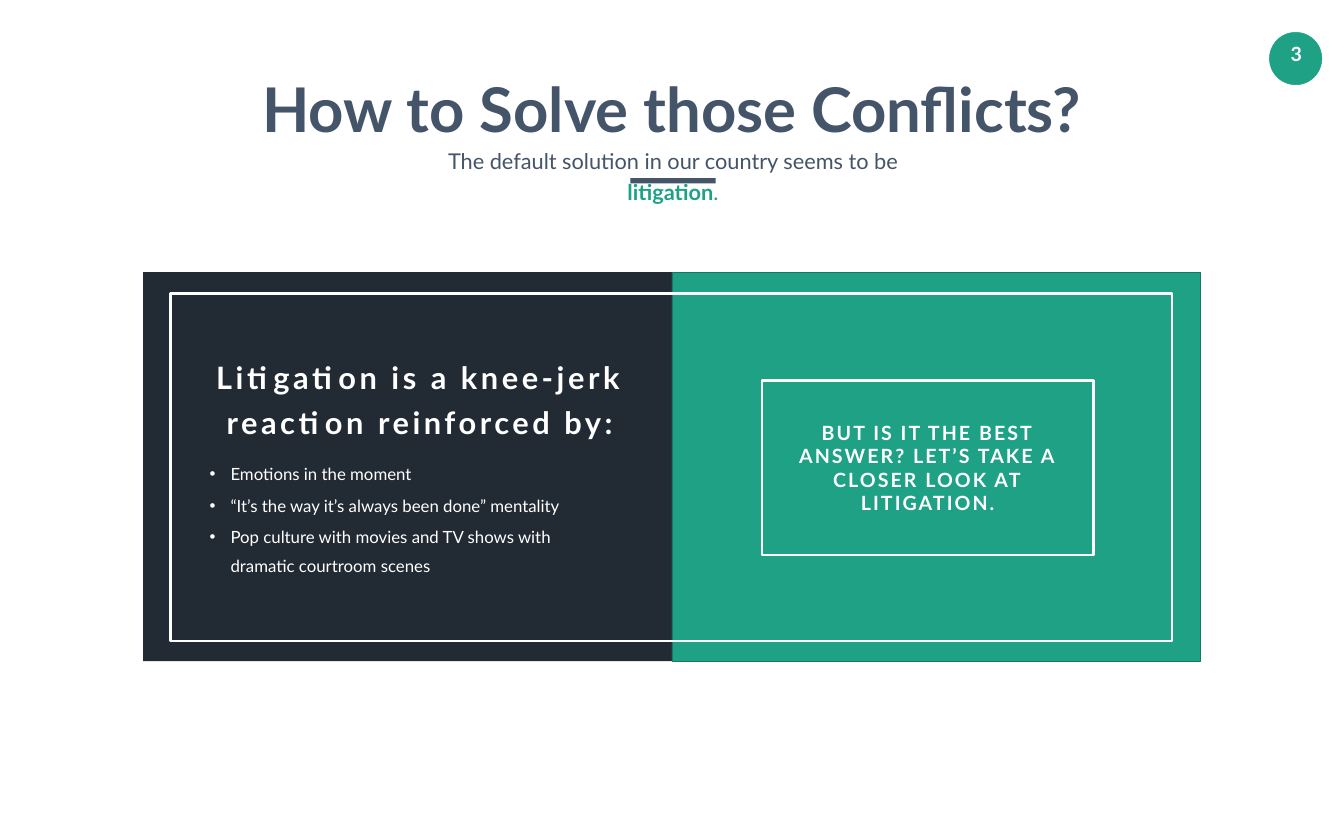
"""Build the slide on litigation as the default way to solve conflicts."""
import pptx
import pptx.util
from pptx.dml.color import RGBColor
from pptx.enum.shapes import MSO_SHAPE
from pptx.enum.text import MSO_ANCHOR, MSO_AUTO_SIZE, PP_ALIGN
from pptx.oxml.ns import qn
from lxml import etree

Pt = pptx.util.Pt

WHITE = RGBColor(0xFF, 0xFF, 0xFF)
GREEN = RGBColor(0x1E, 0xA1, 0x85)
GREEN_EDGE = RGBColor(0x16, 0x77, 0x62)
SLATE = RGBColor(0x44, 0x54, 0x69)
NAVY = RGBColor(0x22, 0x2A, 0x34)

FONT = "Lato"
SLIDE_W, SLIDE_H = 1440, 900
PANEL_X, PANEL_Y, PANEL_W, PANEL_H = 153.4, 291.6, 566.6, 416.9

SHAPES = [
    (MSO_SHAPE.OVAL, (1360.1, 34.6, 56.2, 56.2), GREEN, GREEN, 0.5),
    (MSO_SHAPE.RECTANGLE, (675.4, 190.8, 91.4, 5.8), SLATE, None, 0),
    (MSO_SHAPE.RECTANGLE, (PANEL_X, PANEL_Y, PANEL_W, PANEL_H), NAVY, None, 0),
    (MSO_SHAPE.RECTANGLE, (PANEL_X + PANEL_W, PANEL_Y, PANEL_W, PANEL_H), GREEN, GREEN_EDGE, 1),
    (MSO_SHAPE.RECTANGLE, (182.9, 314.6, 1072.8, 372.2), None, WHITE, 2.8),
    (MSO_SHAPE.RECTANGLE, (816.5, 407.5, 355, 187.2), None, WHITE, 3),
]

SUBTITLE = [("The default solution in our country seems to be ", SLATE, False),
            ("litigation", GREEN, True), (".", GREEN, False)]
BULLETS = ["Emotions in the moment",
           "“It’s the way it’s always been done” mentality",
           "Pop culture with movies and TV shows with dramatic courtroom scenes"]

CENTER = {"alignment": PP_ALIGN.CENTER}
LOOSE = {"alignment": PP_ALIGN.CENTER, "line_spacing": 1.2}
LISTED = {"line_spacing": Pt(30.3), "space_before": Pt(3.6)}

TEXTS = [
    {"box": (1365.1, 39.6, 47.5, 36.7), "inset": (10.8, 5), "wrap": False, "size": 21,
     "paras": [[("3", WHITE, True)]], "format": CENTER},
    {"box": (275, 73.4, 889.9, 85.7), "inset": (5.8, 2.9), "wrap": False, "size": 66,
     "paras": [[("How to Solve those Conflicts?", SLATE, True)]], "format": CENTER},
    {"box": (429.1, 146.2, 583.9, 43.2), "inset": (13, 6.5), "size": 23.3,
     "paras": [SUBTITLE], "format": LOOSE},
    {"box": (211.7, 378.7, 476.6, 91.4), "inset": (0, 0), "size": 33, "spacing": 3.8,
     "anchor": MSO_ANCHOR.MIDDLE, "format": LOOSE,
     "paras": [[("Litigation is a knee-jerk reaction reinforced by:", WHITE, True)]]},
    {"box": (211.7, 481.7, 447.8, 139), "inset": (13, 6.5), "size": 18, "bullet": 22.3,
     "paras": [[(t, WHITE, False)] for t in BULLETS], "format": LISTED},
    {"box": (830.9, 446.4, 326.2, 109.4), "inset": (7.2, 3.6), "size": 21, "spacing": 2.2,
     "anchor": MSO_ANCHOR.MIDDLE, "format": CENTER,
     "paras": [[("BUT IS IT THE BEST ANSWER? LET’S TAKE A CLOSER LOOK AT LITIGATION.",
                 WHITE, True)]]},
]


def apply(target, values):
    for name, value in values.items():
        setattr(target, name, value)


def add_block(s, kind, box, fill, line, width):
    sp = s.shapes.add_shape(kind, *map(Pt, box))
    sp.shadow.inherit = False
    for part, color in ((sp.fill, fill), (sp.line.fill, line)):
        if color is None:
            part.background()
        else:
            part.solid()
            part.fore_color.rgb = color
    if line is not None:
        sp.line.width = Pt(width)


def add_bullet(p, indent):
    pPr = p._p.get_or_add_pPr()
    pPr.set("marL", str(Pt(indent)))
    pPr.set("indent", str(-Pt(indent)))
    etree.SubElement(pPr, qn("a:buFont")).set("typeface", "Arial")
    etree.SubElement(pPr, qn("a:buChar")).set("char", "•")


def add_text(s, item):
    tf = s.shapes.add_textbox(*map(Pt, item["box"])).text_frame
    x, y = map(Pt, item["inset"])
    apply(tf, {"word_wrap": item.get("wrap", True),
               "auto_size": MSO_AUTO_SIZE.SHAPE_TO_FIT_TEXT,
               "vertical_anchor": item.get("anchor", MSO_ANCHOR.TOP),
               "margin_left": x, "margin_right": x, "margin_top": y, "margin_bottom": y})
    for i, runs in enumerate(item["paras"]):
        p = tf.add_paragraph() if i else tf.paragraphs[0]
        apply(p, item["format"])
        if "bullet" in item:
            add_bullet(p, item["bullet"])
        for text, color, bold in runs:
            r = p.add_run()
            r.text = text
            apply(r.font, {"name": FONT, "size": Pt(item["size"]), "bold": bold})
            r.font.color.rgb = color
            if "spacing" in item:
                r._r.get_or_add_rPr().set("spc", str(round(item["spacing"] * 100)))


def main():
    prs = pptx.Presentation()
    apply(prs, {"slide_width": Pt(SLIDE_W), "slide_height": Pt(SLIDE_H)})
    s = prs.slides.add_slide(prs.slide_layouts[6])
    for block in SHAPES:
        add_block(s, *block)
    for item in TEXTS:
        add_text(s, item)
    prs.save("out.pptx")


if __name__ == "__main__":
    main()
